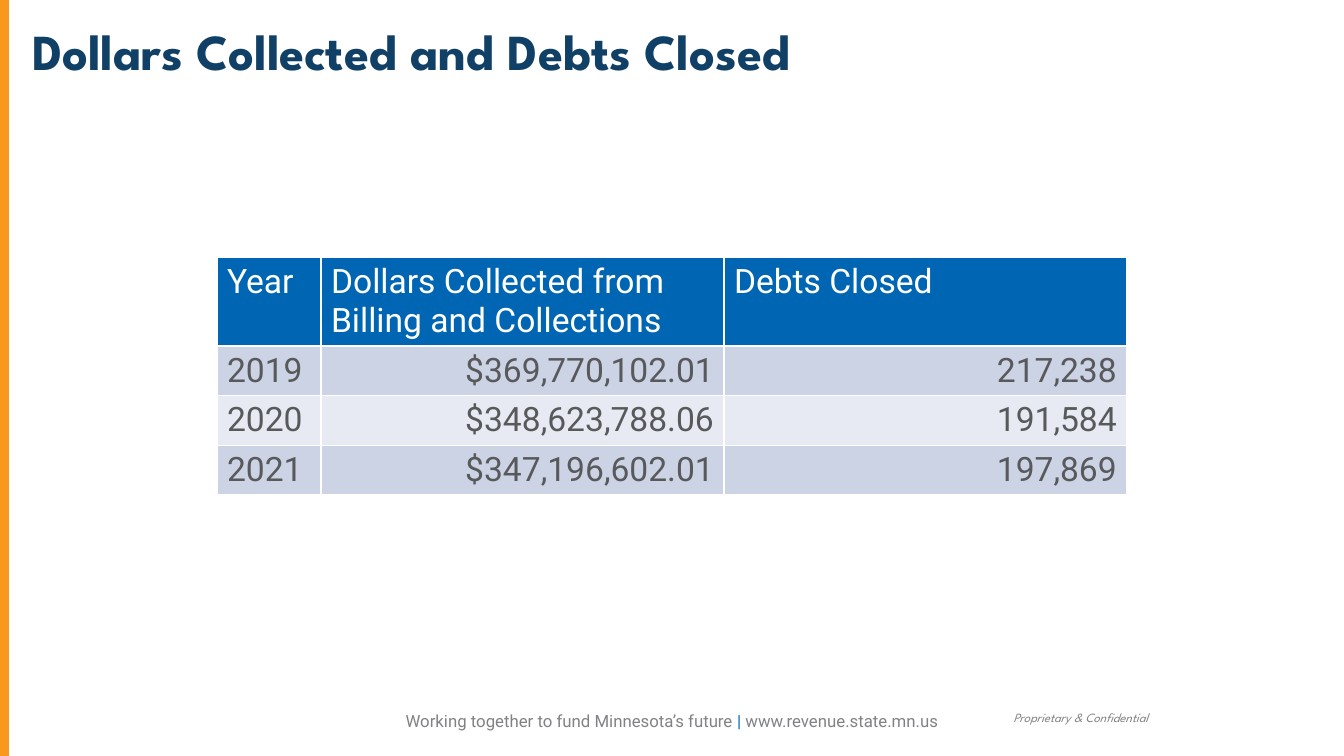
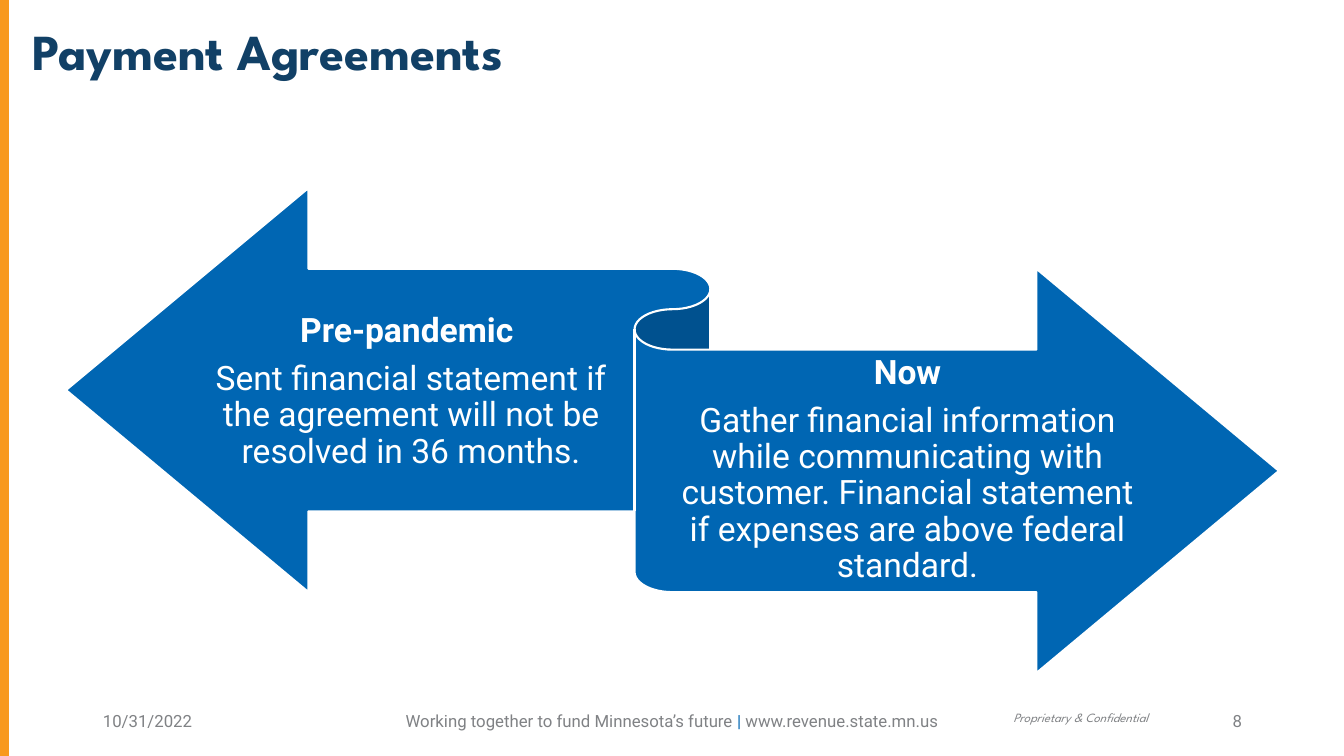
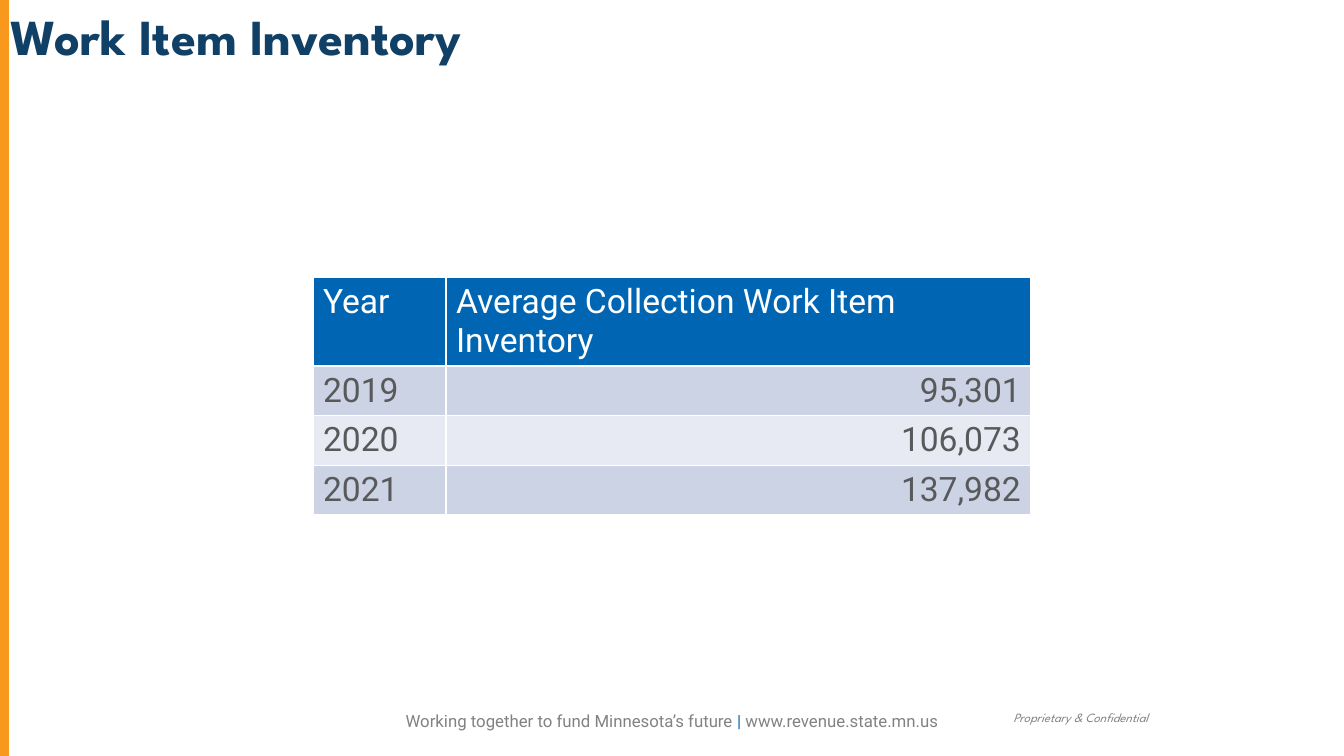
"""Build three slides on collections, payment agreements and work item inventory."""
import lxml.etree
import pptx
import pptx.dml.color
import pptx.enum.shapes
import pptx.enum.text
import pptx.oxml.ns
import pptx.util

RGB = pptx.dml.color.RGBColor.from_string
Pt = pptx.util.Pt
ALIGN = pptx.enum.text.PP_ALIGN
ANCHOR = pptx.enum.text.MSO_ANCHOR
SHAPE = pptx.enum.shapes.MSO_SHAPE
PX = 12192000 / 1344


class Theme:
    navy, blue, orange = RGB("114066"), RGB("0066B3"), RGB("F8991D")
    gray, dark, white = RGB("808285"), RGB("58595B"), RGB("FFFFFF")
    bands = RGB("E7EAF2"), RGB("CCD3E5")
    title = dict(name="League Spartan", size=Pt(36), bold=True)
    body = dict(name="Roboto", size=Pt(24), bold=False)
    strong = dict(body, bold=True)
    footer = dict(name="Roboto", size=Pt(12))
    notice = dict(name="League Spartan", size=Pt(9), italic=True)


def write(p, runs, fmt, align=ALIGN.LEFT):
    p.alignment = align
    for text, color in runs:
        r = p.add_run()
        r.text = text
        for key, value in fmt.items():
            setattr(r.font, key, value)
        r.font.color.rgb = color


def add_text(s, box, paragraphs, align=ALIGN.LEFT, **frame):
    tf = s.shapes.add_textbox(*[round(v * PX) for v in box]).text_frame
    for key, value in {"word_wrap": True, "vertical_anchor": ANCHOR.MIDDLE, **frame}.items():
        setattr(tf, key, value)
    for i, (runs, fmt) in enumerate(paragraphs):
        write(tf.add_paragraph() if i else tf.paragraphs[0], runs, fmt, align)
    return tf


tagline = [
    ("Working together to fund Minnesota’s future ", Theme.gray),
    ("|", Theme.blue),
    (" www.revenue.state.mn.us", Theme.gray),
]
pages = [
    dict(
        title="Dollars Collected and Debts Closed",
        title_box=(22, 15, 959, 101),
        origin=(217, 257),
        columns=(104, 403, 403),
        rows=[
            ("Year", "Dollars Collected from Billing and Collections", "Debts Closed"),
            ("2019", "$369,770,102.01", "217,238"),
            ("2020", "$348,623,788.06", "191,584"),
            ("2021", "$347,196,602.01", "197,869"),
        ],
    ),
    dict(
        title="Payment Agreements",
        title_box=(22, 15, 959, 101),
        ribbon=(66, 188, 1213, 485),
        arrows=[
            ((211, 273, 400, 238), "Pre-pandemic ",
             "Sent financial statement if the agreement will not be resolved in 36 months."),
            ((671, 325, 473, 290), "Now",
             "Gather financial information while communicating with customer. "
             "Financial statement if expenses are above federal standard."),
        ],
        corners=[
            ((93, 701, 150, 40), "10/31/2022", ALIGN.LEFT),
            ((1091, 701, 161, 40), "8", ALIGN.RIGHT),
        ],
    ),
    dict(
        title="Work Item Inventory",
        title_box=(0, 0, 1344, 134),
        origin=(313, 277),
        columns=(133, 585),
        rows=[
            ("Year", "Average Collection Work Item Inventory"),
            ("2019", "95,301"),
            ("2020", "106,073"),
            ("2021", "137,982"),
        ],
    ),
]

prs = pptx.Presentation()
prs.slide_width, prs.slide_height = round(1344 * PX), round(756 * PX)

for page in pages:
    s = prs.slides.add_slide(prs.slide_layouts[5])

    band = s.shapes.add_connector(
        pptx.enum.shapes.MSO_CONNECTOR.STRAIGHT, round(3 * PX), 0, round(3 * PX), prs.slide_height)
    band.line.color.rgb, band.line.width = Theme.orange, Pt(8)
    lxml.etree.SubElement(band._element.spPr, pptx.oxml.ns.qn("a:effectLst"))

    sp = s.shapes.title
    for key, value in zip(("left", "top", "width", "height"), page["title_box"]):
        setattr(sp, key, round(value * PX))
    sp.text_frame.vertical_anchor = ANCHOR.TOP
    sp.text_frame.auto_size = pptx.enum.text.MSO_AUTO_SIZE.NONE
    write(sp.text_frame.paragraphs[0], [(page["title"], Theme.navy)], Theme.title)

    if "rows" in page:
        rows, columns = page["rows"], page["columns"]
        heights = [88] + [49] * (len(rows) - 1)
        box = (*page["origin"], sum(columns), sum(heights))
        table = s.shapes.add_table(len(rows), len(columns), *[round(v * PX) for v in box]).table
        for column, width in zip(table.columns, columns):
            column.width = round(width * PX)
        for i, row in enumerate(rows):
            table.rows[i].height = round(heights[i] * PX)
            for j, text in enumerate(row):
                cell = table.cell(i, j)
                cell.fill.solid()
                cell.fill.fore_color.rgb = Theme.bands[i % 2] if i else Theme.blue
                write(cell.text_frame.paragraphs[0],
                      [(text, Theme.dark if i else Theme.white)], Theme.body,
                      ALIGN.RIGHT if i and j else ALIGN.LEFT)

    if "ribbon" in page:
        sp = s.shapes.add_shape(SHAPE.LEFT_RIGHT_RIBBON, *[round(v * PX) for v in page["ribbon"]])
        sp.shadow.inherit = False
        sp.fill.solid()
        sp.fill.fore_color.rgb = Theme.blue
        sp.line.color.rgb, sp.line.width = Theme.white, Pt(1.5)
        for box, heading, body in page["arrows"]:
            tf = add_text(
                s, box,
                [([(heading, Theme.white)], Theme.strong), ([(body, Theme.white)], Theme.body)],
                ALIGN.CENTER, margin_left=0, margin_right=0)
            for p in tf.paragraphs:
                p.line_spacing, p.space_after = 0.9, Pt(8.4)

    add_text(s, (364, 701, 616, 40), [(tagline, Theme.footer)], ALIGN.CENTER)
    add_text(s, (953, 697, 205, 33), [([("Proprietary & Confidential", Theme.gray)], Theme.notice)],
             ALIGN.RIGHT, vertical_anchor=ANCHOR.BOTTOM)
    for box, text, align in page.get("corners", []):
        add_text(s, box, [([(text, Theme.gray)], Theme.footer)], align)

prs.save("out.pptx")
